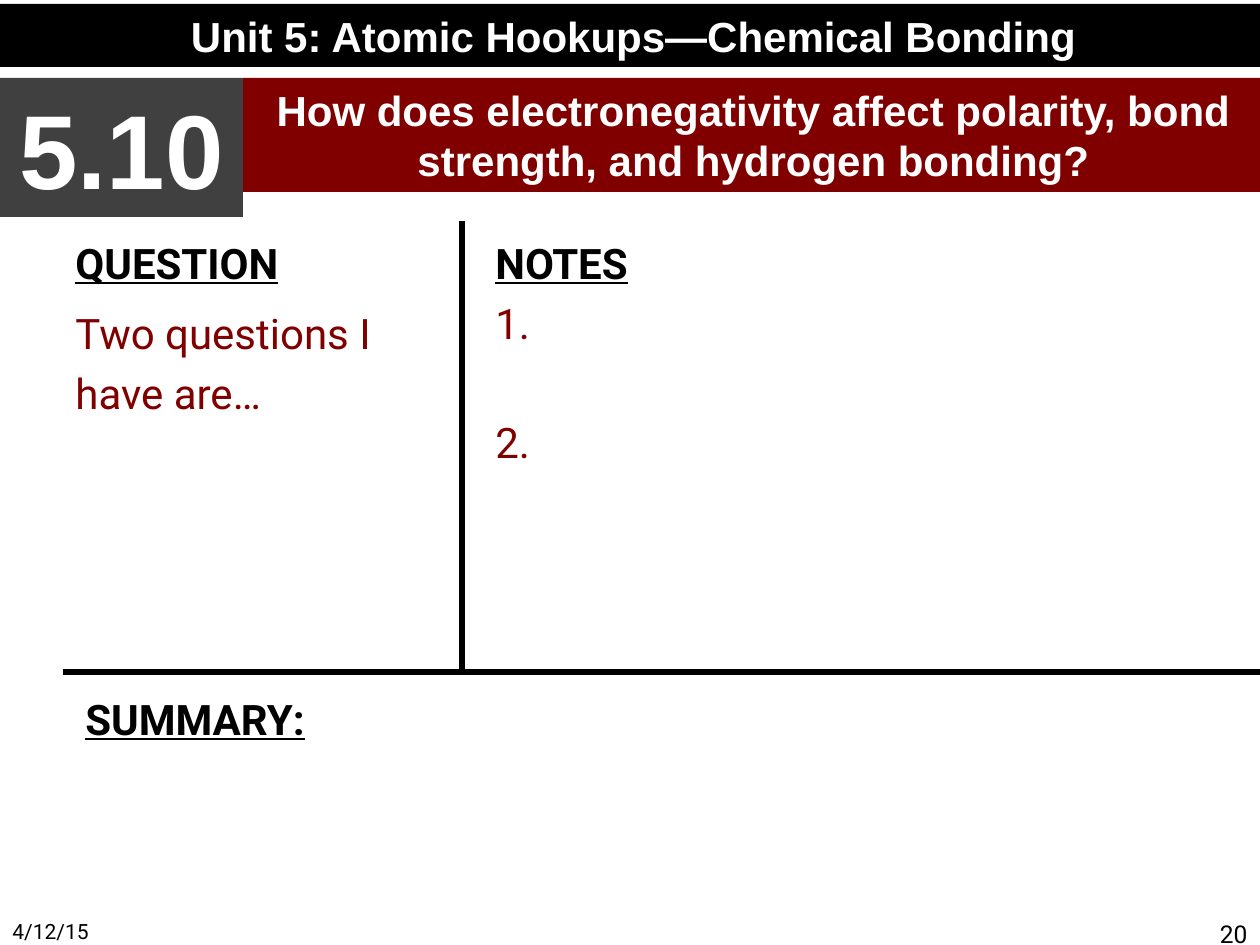
from lxml import etree
from pptx import Presentation
from pptx import util as u
from pptx.dml.color import RGBColor
from pptx.enum import shapes, text
from pptx.oxml.ns import qn

PX = u.Inches(1) // 126
COLORS = {"black": "000000", "gray": "404040", "maroon": "800000", "white": "FFFFFF"}
ALIGN = {"l": text.PP_ALIGN.LEFT, "c": text.PP_ALIGN.CENTER, "r": text.PP_ALIGN.RIGHT}

TITLE = ("How does electronegativity affect polarity, bond strength, and hydrogen bonding?",
         (243, 78, 1021, 114), "maroon", 24)
BARS = [
    ("Unit 5: Atomic Hookups—Chemical Bonding", (0, 4, 1267, 63), "black", 24),
    ("5.10", (0, 78, 243, 139), "gray", 60),
]
SECTIONS = [
    ("QUESTION", (63, 227, 399, 435), [("Two questions I have are…", 1.2, 5.6)]),
    ("NOTES", (483, 227, 777, 435), [("1.", 1, 5.6), ("2.", 1, 39.4)]),
    ("SUMMARY:", (73, 683, 1187, 262), []),
]
FOOTERS = [
    ("4/12/15", (0, 911, 294, 34), 12, "l"),
    ("20", (966, 911, 294, 34), 14, "r"),
]
RULES = [(462, 221, 462, 672), (1260, 672, 63, 672)]


def px(values):
    return [value * PX for value in values]


def color(name):
    return RGBColor.from_string(COLORS[name])


def write(para, words, size, font, ink, bold=False, underline=False, align="l"):
    para.alignment = ALIGN[align]
    span = para.add_run()
    span.text = words
    span.font.size = u.Pt(size)
    span.font.name = font
    span.font.color.rgb = color(ink)
    span.font.bold = bold
    span.font.underline = underline


def set_frame(box, anchor, top=6):
    frame = box.text_frame
    frame.word_wrap = True
    frame.auto_size = text.MSO_AUTO_SIZE.NONE
    frame.vertical_anchor = anchor
    frame.margin_left = frame.margin_right = u.Inches(0.1)
    frame.margin_top, frame.margin_bottom = px((top, 6))
    return frame


def fill_bar(bar, words, place, fill, size):
    bar.left, bar.top, bar.width, bar.height = px(place)
    bar.fill.solid()
    bar.fill.fore_color.rgb = color(fill)
    bar.line.fill.background()
    frame = set_frame(bar, text.MSO_ANCHOR.MIDDLE)
    write(frame.paragraphs[0], words, size, "Arial", "white", bold=True, align="c")


def add_text_box(page, place, top):
    box = page.shapes.add_textbox(*px(place))
    return set_frame(box, text.MSO_ANCHOR.TOP, top)


deck = Presentation()
deck.slide_width, deck.slide_height = px((1260, 945))
page = deck.slides.add_slide(deck.slide_layouts[5])

fill_bar(page.shapes.title, *TITLE)
for words, place, fill, size in BARS:
    bar = page.shapes.add_shape(shapes.MSO_SHAPE.RECTANGLE, *px(place))
    bar.shadow.inherit = False
    fill_bar(bar, words, place, fill, size)

for heading, place, entries in SECTIONS:
    frame = add_text_box(page, place, 10)
    write(frame.paragraphs[0], heading, 24, "Roboto", "black", bold=True, underline=True)
    for words, spacing, before in entries:
        para = frame.add_paragraph()
        para.line_spacing = spacing
        para.space_before = u.Pt(before)
        write(para, words, 24, "Roboto", "maroon")

for words, place, size, align in FOOTERS:
    frame = add_text_box(page, place, 8)
    write(frame.paragraphs[0], words, size, "Roboto", "black", align=align)

for ends in RULES:
    rule = page.shapes.add_connector(shapes.MSO_CONNECTOR.STRAIGHT, *px(ends))
    rule.line.color.rgb = color("black")
    rule.line.width = u.Pt(3)
    etree.SubElement(rule._element.spPr, qn("a:effectLst"))

deck.save("out.pptx")
